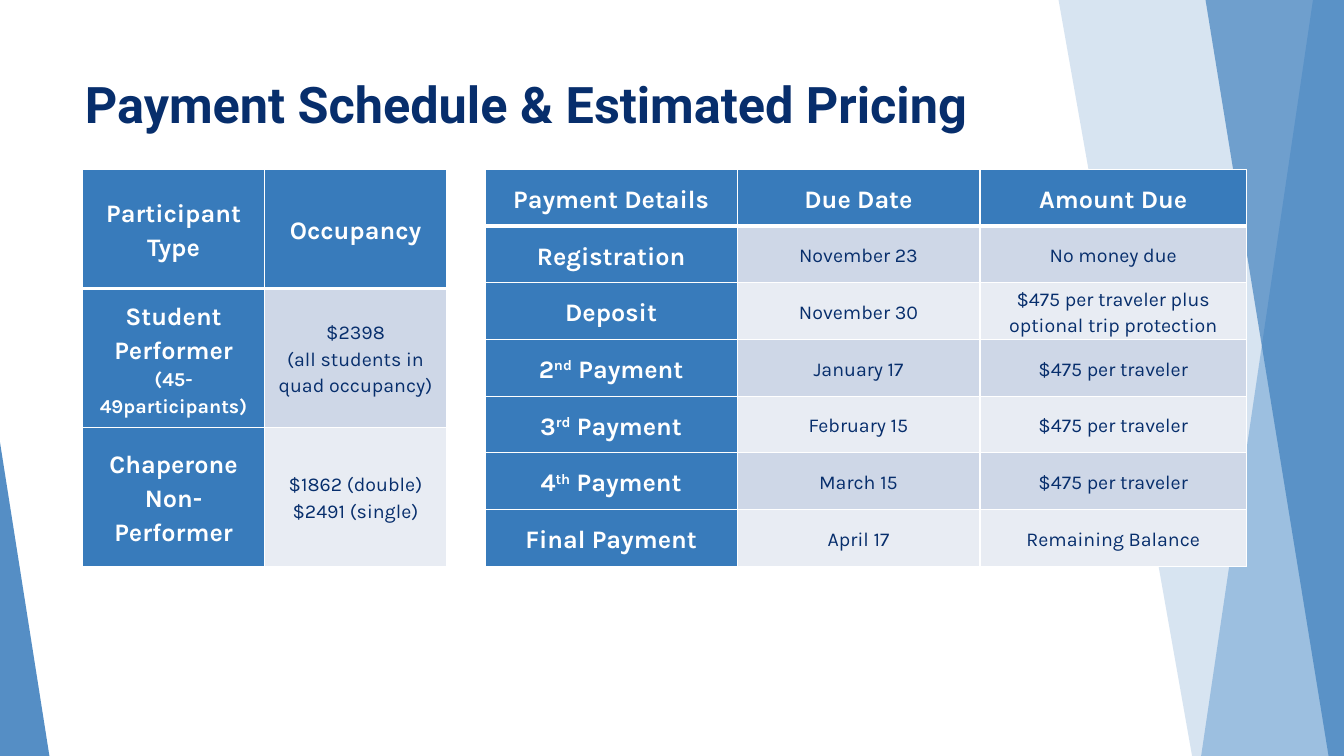
from copy import deepcopy

from lxml.etree import SubElement
from pptx import Presentation
from pptx.dml.color import RGBColor
from pptx.enum.shapes import MSO_SHAPE
from pptx.enum.text import MSO_ANCHOR, MSO_AUTO_SIZE, PP_ALIGN
from pptx.oxml import parse_xml
from pptx.oxml.ns import nsdecls, qn
from pptx.util import Pt

BLUE, SKY, NAVY, WHITE = "387BBB", "84B0DA", "072E6C", "FFFFFF"
BANDS = ("CED7E7", "E8ECF3")
TOP, BOTTOM, RIGHT = -0.72, 540, 960


def colour(hex_code):
    return RGBColor.from_string(hex_code)


def write(paragraph, text, font="Karla", size=14, ink=NAVY, bold=False,
          align=PP_ALIGN.CENTER, spacing=1.15):
    """Fill a paragraph: \\v breaks the line, ^ marks encircle a superscript."""
    paragraph.alignment = align
    paragraph.line_spacing = spacing
    for line_number, line in enumerate(text.split("\v")):
        if line_number:
            paragraph.add_line_break()
            paragraph._p[-1].append(deepcopy(run._r.rPr))
        for part_number, part in enumerate(line.split("^")):
            run = paragraph.add_run()
            run.text = part
            run.font.name = font
            run.font.size = Pt(size)
            run.font.bold = bold
            run.font.color.rgb = colour(ink)
            if part_number % 2:
                run._r.rPr.set("baseline", "30000")


class PricingSlide:
    def __init__(self, deck):
        self.slide = deck.slides.add_slide(deck.slide_layouts[5])
        self.shapes = self.slide.shapes

    def tint(self, shape, hex_code, opacity):
        shape.shadow.inherit = False
        shape.fill.solid()
        shape.fill.fore_color.rgb = colour(hex_code)
        shape.line.fill.background()
        srgb = shape._element.spPr.find(qn("a:solidFill"))[0]
        SubElement(srgb, qn("a:alpha"), val=str(opacity * 1000))

    def ribbon(self, top_left, bottom_left, hex_code, opacity):
        outline = self.shapes.build_freeform(Pt(top_left), Pt(TOP))
        corners = [(RIGHT, TOP), (RIGHT, BOTTOM), (bottom_left, BOTTOM)]
        outline.add_line_segments([(Pt(x), Pt(y)) for x, y in corners])
        self.tint(outline.convert_to_shape(), hex_code, opacity)

    def wedge(self, top, width, hex_code, opacity):
        shape = self.shapes.add_shape(MSO_SHAPE.ISOSCELES_TRIANGLE, 0, Pt(top),
                                      Pt(width), Pt(BOTTOM - top))
        shape.adjustments[0] = 0
        self.tint(shape, hex_code, opacity)

    def title(self, text, left, top, width, height):
        heading = self.shapes.title
        self.shapes._spTree.append(heading._element)  # in front of the ribbons
        heading.left, heading.top = Pt(left), Pt(top)
        heading.width, heading.height = Pt(width), Pt(height)
        frame = heading.text_frame
        frame.word_wrap = True
        frame.auto_size = MSO_AUTO_SIZE.NONE
        frame.vertical_anchor = MSO_ANCHOR.TOP
        write(frame.paragraphs[0], text, font="Roboto", size=36, bold=True,
              align=PP_ALIGN.LEFT, spacing=1.0)

    def borders(self, cell, row):
        widths = {"L": 1, "R": 1, "T": 3 if row == 1 else 1, "B": 3 if row == 0 else 1}
        properties = cell._tc.get_or_add_tcPr()
        for position, (side, width) in enumerate(widths.items()):
            properties.insert(position, parse_xml(
                f'<a:ln{side} {nsdecls("a")} w="{Pt(width)}"><a:solidFill>'
                f'<a:srgbClr val="{WHITE}"/></a:solidFill></a:ln{side}>'))

    def table(self, rows, left, top, widths, heights):
        grid = self.shapes.add_table(len(rows), len(widths), Pt(left), Pt(top),
                                     Pt(sum(widths)), Pt(sum(heights))).table
        grid.horz_banding = False
        for column, width in zip(grid.columns, widths):
            column.width = Pt(width)
        for r, (entries, height) in enumerate(zip(rows, heights)):
            grid.rows[r].height = Pt(height)
            for c, entry in enumerate(entries):
                self.cell(grid.cell(r, c), entry, r, heading=r == 0 or c == 0)

    def cell(self, cell, entry, row, heading):
        cell.margin_left = cell.margin_right = Pt(5)
        cell.margin_top = cell.margin_bottom = 0
        cell.vertical_anchor = MSO_ANCHOR.MIDDLE
        cell.fill.solid()
        cell.fill.fore_color.rgb = colour(BLUE if heading else BANDS[(row - 1) % 2])
        self.borders(cell, row)
        for number, text in enumerate(entry.split("\n")):
            frame = cell.text_frame
            paragraph = frame.add_paragraph() if number else frame.paragraphs[0]
            write(paragraph, text, size=18 if heading and not number else 14,
                  ink=WHITE if heading else NAVY, bold=heading)


PRICING = [
    ("Participant Type", "Occupancy"),
    ("Student Performer\n(45-49participants)", "$2398\v(all students in quad occupancy)"),
    ("Chaperone Non-Performer", "$1862 (double)\v$2491 (single)"),
]
SCHEDULE = [
    ("Payment Details", "Due Date", "Amount Due"),
    ("Registration", "November 23", "No money due"),
    ("Deposit", "November 30", "$475 per traveler plus optional trip protection"),
    ("2^nd^ Payment", "January 17", "$475 per traveler"),
    ("3^rd^ Payment", "February 15", "$475 per traveler"),
    ("4^th^ Payment", "March 15", "$475 per traveler"),
    ("Final Payment", "April 17", "Remaining Balance"),
]


def main():
    deck = Presentation()
    deck.slide_width, deck.slide_height = Pt(RIGHT), Pt(BOTTOM)
    page = PricingSlide(deck)

    # Background ribbons
    page.ribbon(756, 851.5, BLUE, 20)
    page.ribbon(938, 858, SKY, 70)
    page.ribbon(861, 949, BLUE, 65)
    page.wedge(316, 35.3, BLUE, 85)

    # Title
    page.title("Payment Schedule & Estimated Pricing", 53.5, 48.5, 702.5, 103.5)

    # Pricing and payment tables
    page.table(PRICING, 59, 121, [130] * 2, [85, 99.25, 99.25])
    page.table(SCHEDULE, 346.5, 121, [180, 173.5, 190.5], [40.5] * len(SCHEDULE))

    deck.save("out.pptx")


if __name__ == "__main__":
    main()
